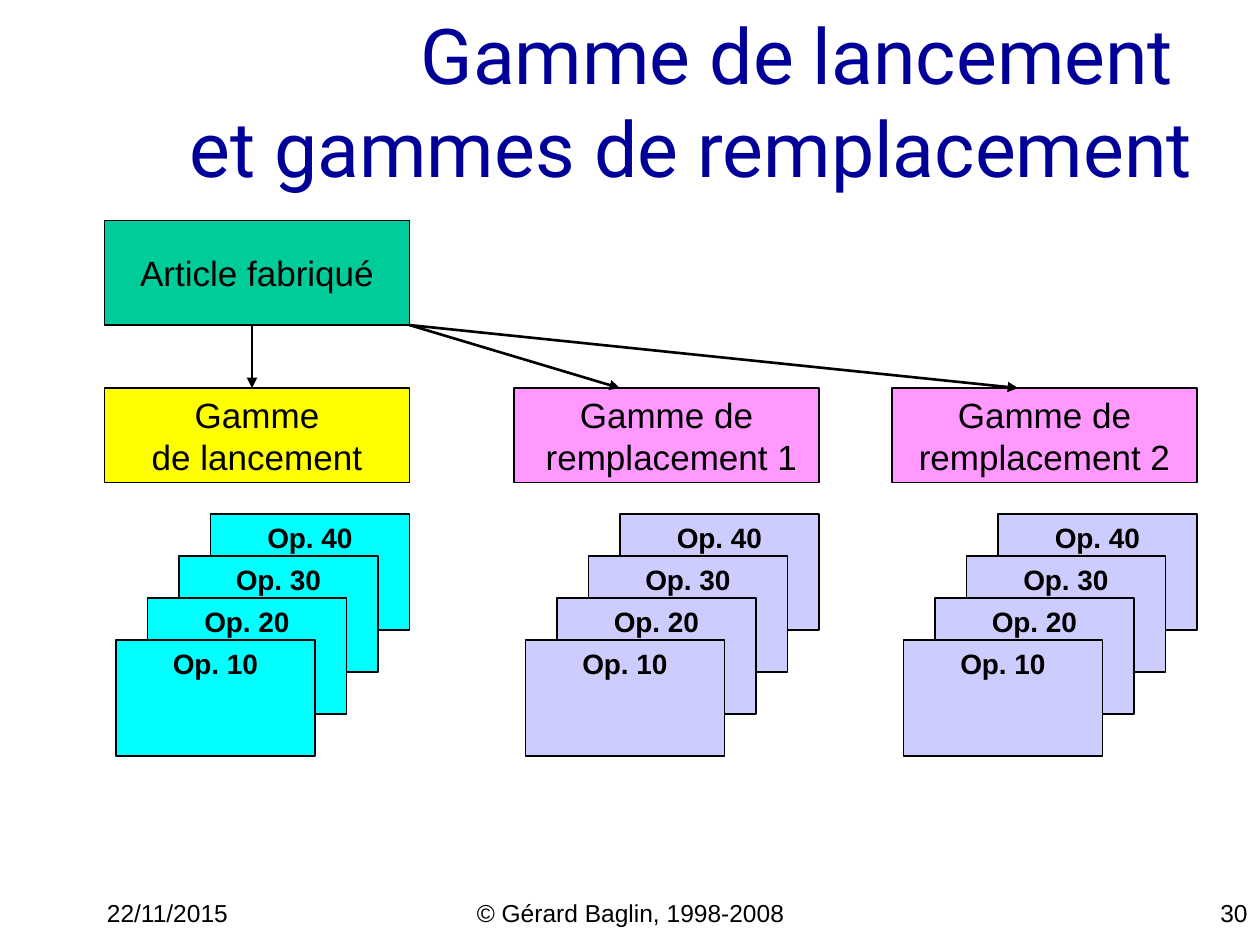
import pptx
import pptx.util
import pptx.dml.color
import pptx.enum.shapes
import pptx.enum.text
import lxml.etree
from pptx.util import Inches

HUES = {
    "ink": "000000",
    "title": "000099",
    "item": "00CC99",
    "main": "FFFF00",
    "spare": "FF99FF",
    "cyan": "00FFFF",
    "lilac": "CCCCFF",
}
ALIGN = pptx.enum.text.PP_ALIGN
ANCHOR = pptx.enum.text.MSO_ANCHOR


def tint(name):
    """Return the named colour."""
    return pptx.dml.color.RGBColor.from_string(HUES[name])


def write(shape, text, size=20, font="Arial", hue="ink", bold=False,
          align=ALIGN.CENTER, anchor=ANCHOR.MIDDLE, wrap=False):
    """Fill a shape with formatted text, one paragraph per line."""
    frame = shape.text_frame
    frame.text = text
    frame.word_wrap = wrap
    frame.vertical_anchor = anchor
    for para in frame.paragraphs:
        para.alignment = align
        for run in para.runs:
            run.font.size = pptx.util.Pt(size)
            run.font.name = font
            run.font.bold = bold
            run.font.color.rgb = tint(hue)


def label(slide, box, text, **style):
    """Place a wrapped text box."""
    shape = slide.shapes.add_textbox(*map(Inches, box))
    write(shape, text, wrap=True, **style)


def block(slide, box, text, fill, **style):
    """Place an outlined rectangle with text."""
    kind = pptx.enum.shapes.MSO_SHAPE.RECTANGLE
    shape = slide.shapes.add_shape(kind, *map(Inches, box))
    shape.shadow.inherit = False
    shape.fill.solid()
    shape.fill.fore_color.rgb = tint(fill)
    shape.line.color.rgb = tint("ink")
    shape.line.width = pptx.util.Pt(0.75)
    write(shape, text, **style)


def arrow(slide, start, end):
    """Draw a line with an arrowhead at its end."""
    kind = pptx.enum.shapes.MSO_CONNECTOR.STRAIGHT
    line = slide.shapes.add_connector(kind, *map(Inches, start + end))
    line.line.color.rgb = tint("ink")
    line.line.width = pptx.util.Pt(1.5)
    space = pptx.oxml.ns.qn
    tail = lxml.etree.SubElement(line.line._get_or_add_ln(), space("a:tailEnd"))
    tail.set("type", "triangle")
    lxml.etree.SubElement(line._element.spPr, space("a:effectLst"))


def stack(slide, box):
    """Place four staggered operation cards, back to front."""
    left, top, width, height, fill = box
    wide, tall = 1.58, 0.92
    for step in range(4):
        part = step / 3
        spot = (left + (width - wide) * (1 - part),
                top + (height - tall) * part, wide, tall)
        block(slide, spot, f"Op. {40 - 10 * step}", fill,
              size=16, bold=True, anchor=ANCHOR.TOP)


def route(slide, box, text, head, card):
    """Place a routing header with its operations below."""
    left, top, width, height = box
    block(slide, (left, top, width, 0.75), text, head)
    stack(slide, (left + 0.09, top + 1, width - 0.09, height - 1, card))


def links(slide, box, tips):
    """Draw the arrows from the item to its routings."""
    left, top, width, height = box
    base = top + height
    for tip in tips:
        start = min(tip, left + width)
        arrow(slide, (start, base), (tip, base + 0.5))


def footer(slide, box):
    """Place the date, the credit and the page number."""
    left, top, width, height = box
    side = 2.08
    parts = (
        (left, side, "22/11/2015", ALIGN.LEFT),
        (3.42, 3.17, "© Gérard Baglin, 1998-2008", ALIGN.CENTER),
        (left + width - side, side, "30", ALIGN.RIGHT),
    )
    for edge, span, text, align in parts:
        label(slide, (edge, top, span, height), text, size=14,
              align=align, anchor=ANCHOR.TOP)


def main():
    """Build and save the slide."""
    deck = pptx.Presentation()
    deck.slide_width, deck.slide_height = Inches(10), Inches(7.5)
    slide = deck.slides.add_slide(deck.slide_layouts[6])
    footer(slide, (0.75, 7.08, 9.25, 0.25))
    label(slide, (0, 0.17, 9.57, 1.25),
          "Gamme de lancement \vet gammes de remplacement",
          size=44, font="Roboto", hue="title", align=ALIGN.RIGHT)
    item = (0.83, 1.75, 2.42, 0.83)
    block(slide, item, "Article fabriqué", "item")
    routes = (
        (0.83, "Gamme\vde lancement", "main", "cyan"),
        (4.08, "Gamme de\n remplacement 1", "spare", "lilac"),
        (7.08, "Gamme de\vremplacement 2", "spare", "lilac"),
    )
    for left, text, head, card in routes:
        route(slide, (left, 3.08, 2.42, 2.92), text, head, card)
    links(slide, item, (2, 4.92, 8.08))
    deck.save("out.pptx")


if __name__ == "__main__":
    main()
